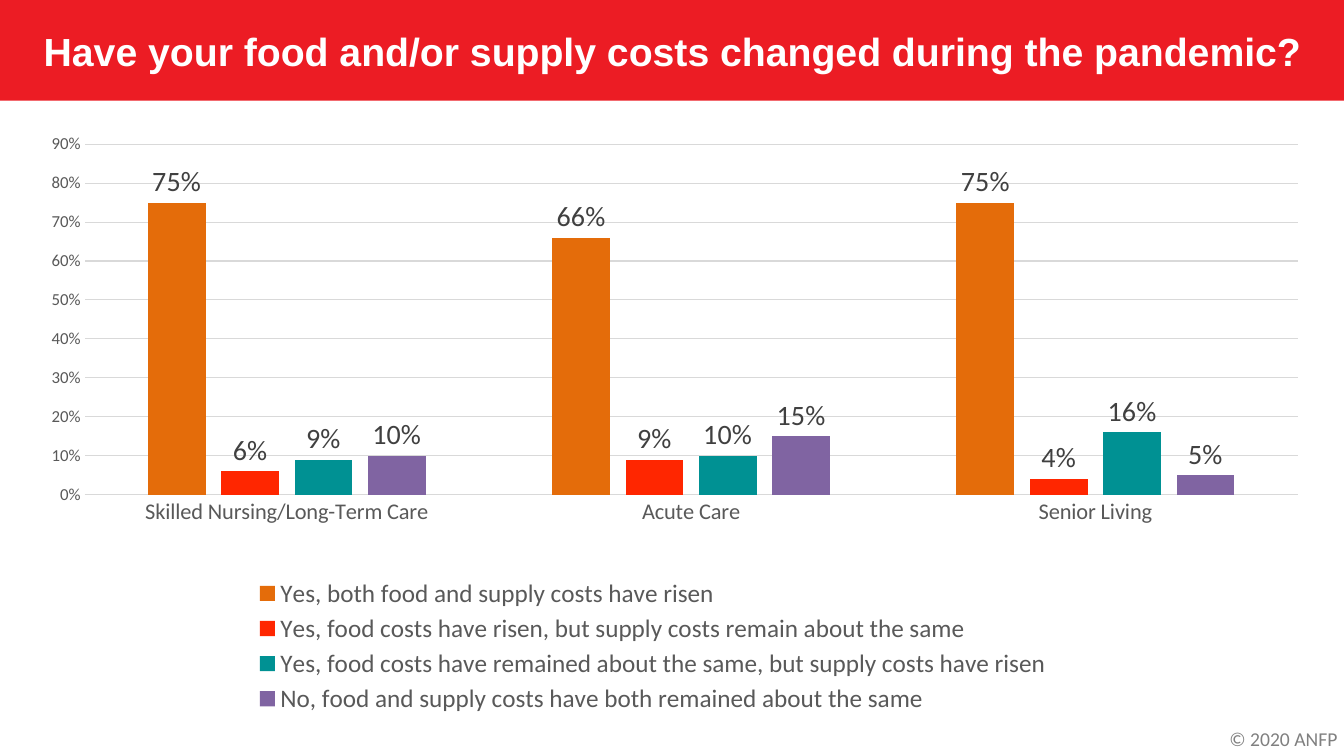
from lxml.etree import SubElement
from pptx import Presentation
from pptx.chart.data import CategoryChartData
from pptx.dml.color import RGBColor
from pptx.enum.chart import XL_CHART_TYPE, XL_LABEL_POSITION, XL_LEGEND_POSITION, XL_TICK_MARK
from pptx.enum.shapes import MSO_SHAPE
from pptx.enum.text import MSO_ANCHOR, MSO_AUTO_SIZE, PP_ALIGN
from pptx.oxml.ns import qn
from pptx.util import Inches, Pt

COLORS = {
    "band": "EC1C24", "white": "FFFFFF", "text": "595959", "label": "404040",
    "rule": "D9D9D9", "note": "808080", "black": "000000",
}
GROUPS = ["Skilled Nursing/Long-Term Care", "Acute Care", "Senior Living"]
ANSWERS = [
    ("Yes, both food and supply costs have risen", (0.75, 0.66, 0.75), "E46C0A"),
    ("Yes, food costs have risen, but supply costs remain about the same",
     (0.06, 0.09, 0.04), "FF2600"),
    ("Yes, food costs have remained about the same, but supply costs have risen",
     (0.09, 0.1, 0.16), "009193"),
    ("No, food and supply costs have both remained about the same",
     (0.1, 0.15, 0.05), "8064A2"),
]


def tint(code):
    return RGBColor.from_string(COLORS.get(code, code))


class Deck:
    cols, rows = 40, 30
    head, body = "Arial", "Calibri"

    def __init__(self):
        self.prs = Presentation()
        self.prs.slide_width = Inches(13.33)
        self.prs.slide_height = Inches(7.5)
        self.slide = self.prs.slides.add_slide(self.prs.slide_layouts[5])

    def area(self, col, row, wide, high):
        step_x = self.prs.slide_width / self.cols
        step_y = self.prs.slide_height / self.rows
        return (int(col * step_x), int(row * step_y),
                int(wide * step_x), int(high * step_y))

    def style(self, font, size, color, name=None, bold=False):
        font.size = Pt(size)
        font.name = name or self.body
        font.bold = bold
        font.color.rgb = tint(color)

    def band(self, *cells):
        shape = self.slide.shapes.add_shape(MSO_SHAPE.RECTANGLE, *self.area(*cells))
        shape.shadow.inherit = False
        shape.fill.solid()
        shape.fill.fore_color.rgb = tint("band")
        shape.line.fill.background()
        self.slide.shapes._spTree.insert(2, shape._element)

    def title(self, text, *cells):
        shape = self.slide.shapes.title
        shape.left, shape.top, shape.width, shape.height = self.area(*cells)
        frame = shape.text_frame
        frame.text = text
        frame.word_wrap = True
        frame.auto_size = MSO_AUTO_SIZE.NONE
        frame.vertical_anchor = MSO_ANCHOR.MIDDLE
        line = frame.paragraphs[0]
        line.alignment = PP_ALIGN.LEFT
        self.style(line.runs[0].font, 28, "white", self.head, True)

    def note(self, text, *cells):
        frame = self.slide.shapes.add_textbox(*self.area(*cells)).text_frame
        frame.text = text
        frame.word_wrap = True
        frame.margin_left = frame.margin_right = 0
        line = frame.paragraphs[0]
        line.alignment = PP_ALIGN.CENTER
        self.style(line.runs[0].font, 14, "note")

    def place(self, host, index, sizes, inner=False):
        for old in host.findall(qn("c:layout")):
            host.remove(old)
        layout = SubElement(host, qn("c:layout"))
        host.insert(index, layout)
        manual = SubElement(layout, qn("c:manualLayout"))
        parts = [("layoutTarget", "inner")] if inner else []
        parts += [("xMode", "edge"), ("yMode", "edge")]
        parts += zip("xywh", sizes)
        for tag, value in parts:
            SubElement(manual, qn("c:" + tag)).set("val", str(value))

    def axis(self, axis, size):
        axis.major_tick_mark = axis.minor_tick_mark = XL_TICK_MARK.NONE
        self.style(axis.tick_labels.font, size, "text")

    def rule(self, line):
        line.color.rgb = tint("rule")
        line.width = Pt(0.75)

    def bars(self, series, color):
        series.format.fill.solid()
        series.format.fill.fore_color.rgb = tint(color)
        series.invert_if_negative = False
        labels = series.data_labels
        labels.show_value = True
        labels.position = XL_LABEL_POSITION.OUTSIDE_END
        labels.number_format = "0%"
        labels.number_format_is_linked = False
        self.style(labels.font, 20, "label")

    def chart(self, groups, answers, *cells):
        data = CategoryChartData(number_format="0%")
        data.categories = groups
        for name, values, _ in answers:
            data.add_series(name, values)
        chart = self.slide.shapes.add_chart(
            XL_CHART_TYPE.COLUMN_CLUSTERED, *self.area(*cells), data).chart
        chart.has_title = False
        self.style(chart.font, 10, "black")
        plot = chart.plots[0]
        plot.gap_width, plot.overlap = 219, -27
        plot.vary_by_categories = False
        for series, (_, _, color) in zip(plot.series, answers):
            self.bars(series, color)
        self.axis(chart.category_axis, 16)
        self.rule(chart.category_axis.format.line)
        scale = chart.value_axis
        self.axis(scale, 12)
        scale.minimum_scale, scale.maximum_scale, scale.major_unit = 0, 0.9, 0.1
        scale.tick_labels.number_format = "0%"
        scale.tick_labels.number_format_is_linked = False
        scale.format.line.fill.background()
        self.rule(scale.major_gridlines.format.line)
        chart.has_legend = True
        legend = chart.legend
        legend.position = XL_LEGEND_POSITION.BOTTOM
        legend.include_in_layout = False
        self.style(legend.font, 18, "text")
        area = chart._chartSpace.chart.plotArea
        self.place(area, 0, (0.04, 0.03, 0.95, 0.58), True)
        self.place(legend._element, 1, (0.17, 0.74, 0.63, 0.24))


def main():
    deck = Deck()
    deck.band(0, 0, 40, 4)
    deck.title("Have your food and/or supply costs changed during the pandemic?",
               1, 0.5, 38.5, 3)
    deck.chart(GROUPS, ANSWERS, 1, 5, 38, 24)
    deck.note("© 2020 ANFP", 36.4, 28.64, 3.6, 1.36)
    deck.prs.save("out.pptx")


if __name__ == "__main__":
    main()
